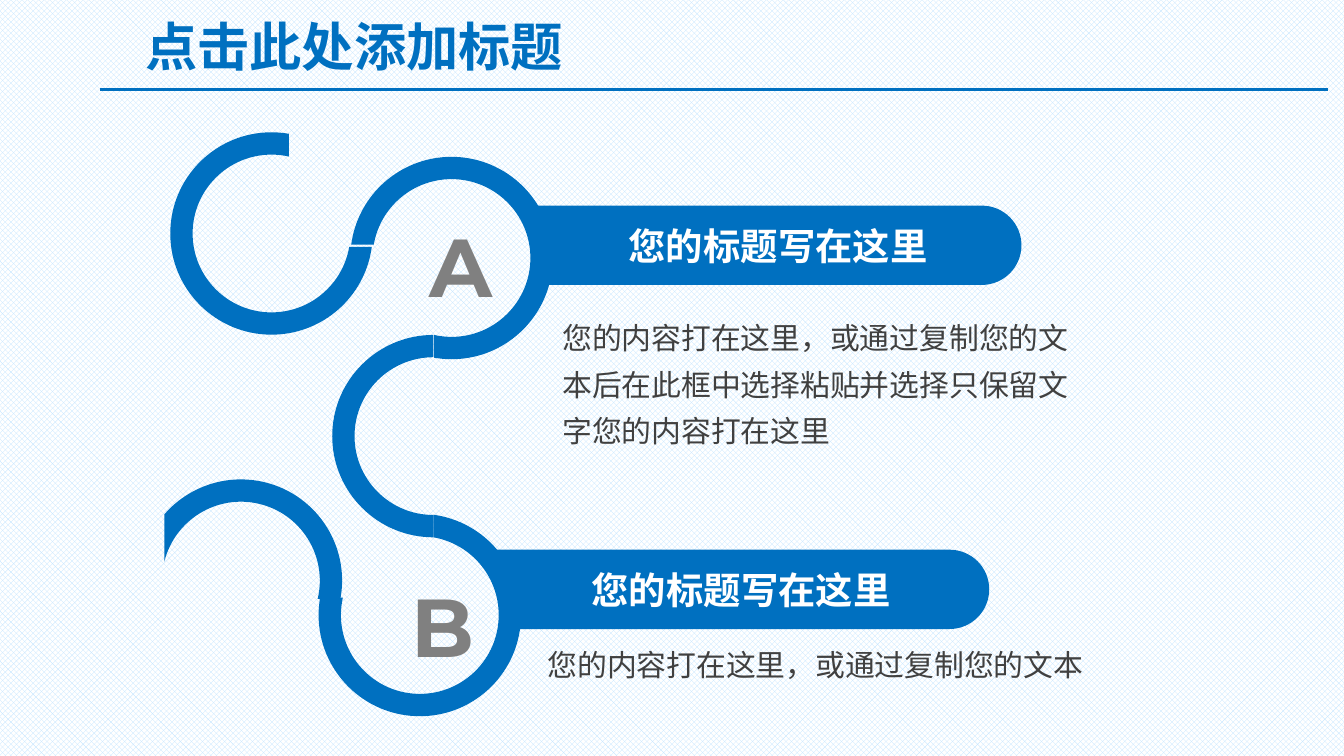
"""Build a slide with a winding ribbon of rings and two labelled bars."""
from itertools import pairwise
from math import asin, ceil, cos, degrees, radians, sin, tan

from lxml import etree
from pptx import Presentation
from pptx import util as u
from pptx.dml.color import RGBColor
from pptx.enum import dml, shapes, text
from pptx.oxml.ns import qn

COLORS = {"blue": "0070C0", "gray": "808080", "dark": "404040",
          "white": "FFFFFF", "weave": "BFE4FF"}
CJK, LATIN = "Noto Sans CJK SC", "Montserrat"
CELL = u.Inches(0.1)
COLS, ROWS = 100, 56.25
OUTER, INNER = 7.53, 5.87

TITLE = ("点击此处添加标题", (9.83, 0.6, 90, 6.2))
RULE = (7.46, 6.65, 98.8)
# Each end of a ring is a base angle and the offset of its straight cut.
HOOK = ((180, 1), (450, 1.3))
HALF = ((90, 0), (270, 0))
TAIL = ((166.7, -5.7), (270, 0))
RINGS = [
    ((33.6, 19.2), HOOK, 0),
    ((32.25, 32.45), HALF, 0),
    ((31.2, 45.8), HOOK, 90),
    ((20.13, 17.37), HOOK, 180),
    ((22.97, 40.06), TAIL, 103.3),
]
BARS = [
    ("您的标题写在这里", (39.8, 15.3, 36.2, 5.9), 0),
    ("您的标题写在这里", (36.7, 40.9, 36.9, 5.9), 0.7),
]
LETTERS = [("A", (31, 15.55, 5.5, 8.4)), ("B", (29.67, 42.3, 5.5, 8.4))]
BODIES = [
    ("您的内容打在这里，或通过复制您的文本后在此框中选择粘贴并选择只保留文字您的内容打在这里",
     (40.87, 22.5, 40.6, 11.5)),
    ("您的内容打在这里，或通过复制您的文本", (39.77, 46.8, 43.6, 4.2)),
]


def rgb(name):
    return RGBColor.from_string(COLORS[name])


def grid(*cells):
    return [u.Emu(round(c * CELL)) for c in cells]


def arc(center, radius, start, end):
    """Return a line to the arc's start, then one curve for each quadrant."""
    cx, cy = center
    low, high = sorted((start, end))
    turns = [90 * n for n in range(ceil(low / 90), ceil(high / 90)) if 90 * n > low]
    stops = [radians(a) for a in sorted([low, *turns, high], reverse=start > end)]

    def point(a, pull=0):
        return (cx + radius * (cos(a) - pull * sin(a)),
                cy + radius * (sin(a) + pull * cos(a)))

    segments = [[point(stops[0])]]
    for a, b in pairwise(stops):
        pull = 4 / 3 * tan((b - a) / 4)
        segments.append([point(a, pull), point(b, -pull), point(b)])
    return segments


def ring(center, ends):
    outer, inner = ([base + degrees(asin(cut / radius)) for base, cut in ends]
                    for radius in (OUTER, INNER))
    return arc(center, OUTER, *outer) + arc(center, INNER, *reversed(inner))


def bar(box, slant):
    x, y, w, h = box
    radius = h / 2
    segments = [[(x, y)], *arc((x + w - radius, y + radius), radius, -90, 90),
                [(x + slant, y + h)]]
    if slant:
        segments.append([(x + slant, y + h * 2 / 3), (x, y + h / 3), (x, y)])
    return segments


def add_outline(s, segments, rotation=0):
    points = [grid(*p) for segment in segments for p in segment]
    builder = s.shapes.build_freeform(*points[0])
    builder.add_line_segments(points[1:], close=True)
    sp = builder.convert_to_shape()
    steps = iter(list(sp._element.iter(qn("a:moveTo"), qn("a:lnTo"))))
    for segment in segments:
        first, *rest = [next(steps) for _ in segment]
        if rest:
            first.tag = qn("a:cubicBezTo")
            for step in rest:
                first.append(step[0])
                step.getparent().remove(step)
    sp.rotation = rotation
    sp.shadow.inherit = False
    sp.fill.solid()
    sp.fill.fore_color.rgb = rgb("blue")
    sp.line.fill.background()
    return sp


def write(sp, words, size, color, font=CJK, bold=False, align=text.PP_ALIGN.LEFT,
          anchor=text.MSO_ANCHOR.TOP, spacing=None):
    tf = sp.text_frame
    tf.word_wrap = True
    tf.vertical_anchor = anchor
    p = tf.paragraphs[0]
    p.alignment = align
    p.line_spacing = spacing
    r = p.add_run()
    r.text = words
    r.font.size = u.Pt(size)
    r.font.bold = bold
    r.font.color.rgb = rgb(color)
    r.font.name = font
    etree.SubElement(r.font._element, qn("a:ea")).set("typeface", font)


def add_text(s, words, box, **style):
    write(s.shapes.add_textbox(*grid(*box)), words, **style)


def main():
    prs = Presentation()
    prs.slide_width, prs.slide_height = grid(COLS, ROWS)
    s = prs.slides.add_slide(prs.slide_layouts[6])
    back = s.background.fill
    back.patterned()
    back.pattern = dml.MSO_PATTERN.TRELLIS
    back.fore_color.rgb = rgb("weave")
    back.back_color.rgb = rgb("white")

    left, y, right = RULE
    rule = s.shapes.add_connector(shapes.MSO_CONNECTOR.STRAIGHT, *grid(left, y, right, y))
    rule.line.color.rgb = rgb("blue")
    rule.line.width = u.Pt(1.5)
    etree.SubElement(rule._element.spPr, qn("a:effectLst"))

    add_text(s, *TITLE, size=28, color="blue", bold=True)
    for center, ends, rotation in RINGS:
        add_outline(s, ring(center, ends), rotation)
    for words, box, slant in BARS:
        write(add_outline(s, bar(box, slant)), words, size=20, color="white", bold=True,
              align=text.PP_ALIGN.CENTER, anchor=text.MSO_ANCHOR.MIDDLE)
    for words, box in LETTERS:
        add_text(s, words, box, size=44, color="gray", font=LATIN, bold=True)
    for words, box in BODIES:
        add_text(s, words, box, size=16, color="dark", spacing=1.3)
    prs.save("out.pptx")


if __name__ == "__main__":
    main()
